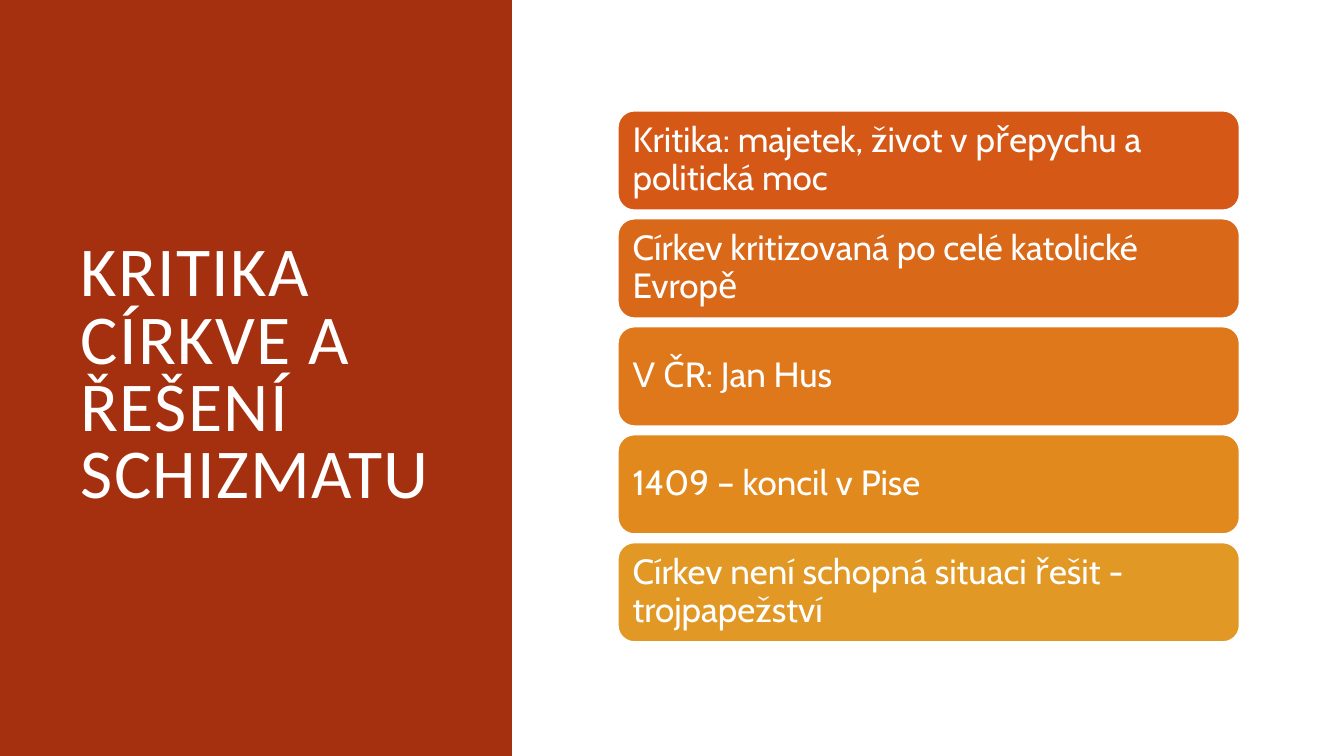
"""Build a slide on church criticism and the schism."""
from dataclasses import dataclass
from typing import Any

from pptx import Presentation
from pptx.dml.color import RGBColor
from pptx.enum.shapes import MSO_SHAPE
from pptx.enum.text import MSO_ANCHOR, PP_ALIGN
from pptx.util import Cm, Pt

TITLE = "KRITIKA CÍRKVE A ŘEŠENÍ SCHIZMATU"
CARDS = [
    ("Kritika: majetek, život v přepychu a politická moc", "D55816"),
    ("Církev kritizovaná po celé katolické Evropě", "D96818"),
    ("V ČR: Jan Hus", "DE781B"),
    ("1409 – koncil v Pise", "E2891D"),
    ("Církev není schopná situaci řešit - trojpapežství", "E19825"),
]
TOP, STEP = 2.79, 2.72


def paint(code):
    return RGBColor.from_string(code)


def write(shape, text, font="Cabin", size=25, color="FFFFFF", lead=0.9, track=0):
    frame = shape.text_frame
    frame.word_wrap = True
    frame.vertical_anchor = MSO_ANCHOR.MIDDLE
    frame.margin_left = frame.margin_right = Cm(0.25)
    frame.margin_top = frame.margin_bottom = Cm(0.25)
    para = frame.paragraphs[0]
    para.alignment = PP_ALIGN.LEFT
    para.line_spacing = lead
    run = para.add_run()
    run.text = text
    run.font.name = font
    run.font.size = Pt(size)
    run.font.color.rgb = paint(color)
    if track:
        run.font._element.set("spc", str(track * 100))


@dataclass
class Deck:
    slide: Any
    ink: str = "FFFFFF"
    edge: float = 1.25

    def block(self, kind, left, top, width, height, fill):
        shape = self.slide.shapes.add_shape(
            kind, Cm(left), Cm(top), Cm(width), Cm(height))
        shape.shadow.inherit = False
        shape.fill.solid()
        shape.fill.fore_color.rgb = paint(fill)
        shape.line.fill.background()
        return shape

    def panel(self, left, top, width, height, fill):
        self.block(MSO_SHAPE.RECTANGLE, left, top, width, height, fill)

    def card(self, left, top, width, height, fill, text):
        shape = self.block(
            MSO_SHAPE.ROUNDED_RECTANGLE, left, top, width, height, fill)
        shape.line.color.rgb = paint(self.ink)
        shape.line.width = Pt(self.edge)
        write(shape, text, color=self.ink)

    def title(self, left, top, width, height, text):
        box = self.slide.shapes.add_textbox(
            Cm(left), Cm(top), Cm(width), Cm(height))
        write(box, text, font="Calibri", size=50, color=self.ink,
              lead=0.8, track=1)


def main():
    show = Presentation()
    show.slide_width, show.slide_height = Cm(33.87), Cm(19.05)
    deck = Deck(show.slides.add_slide(show.slide_layouts[6]))
    deck.panel(0, 0, 12.9, 19.05, "A5300F")
    deck.title(1.78, 1.78, 9.5, 15.47, TITLE)
    for row, (text, fill) in enumerate(CARDS):
        deck.card(15.57, TOP + row * STEP, 15.67, 2.51, fill, text)
    show.save("out.pptx")


if __name__ == "__main__":
    main()
